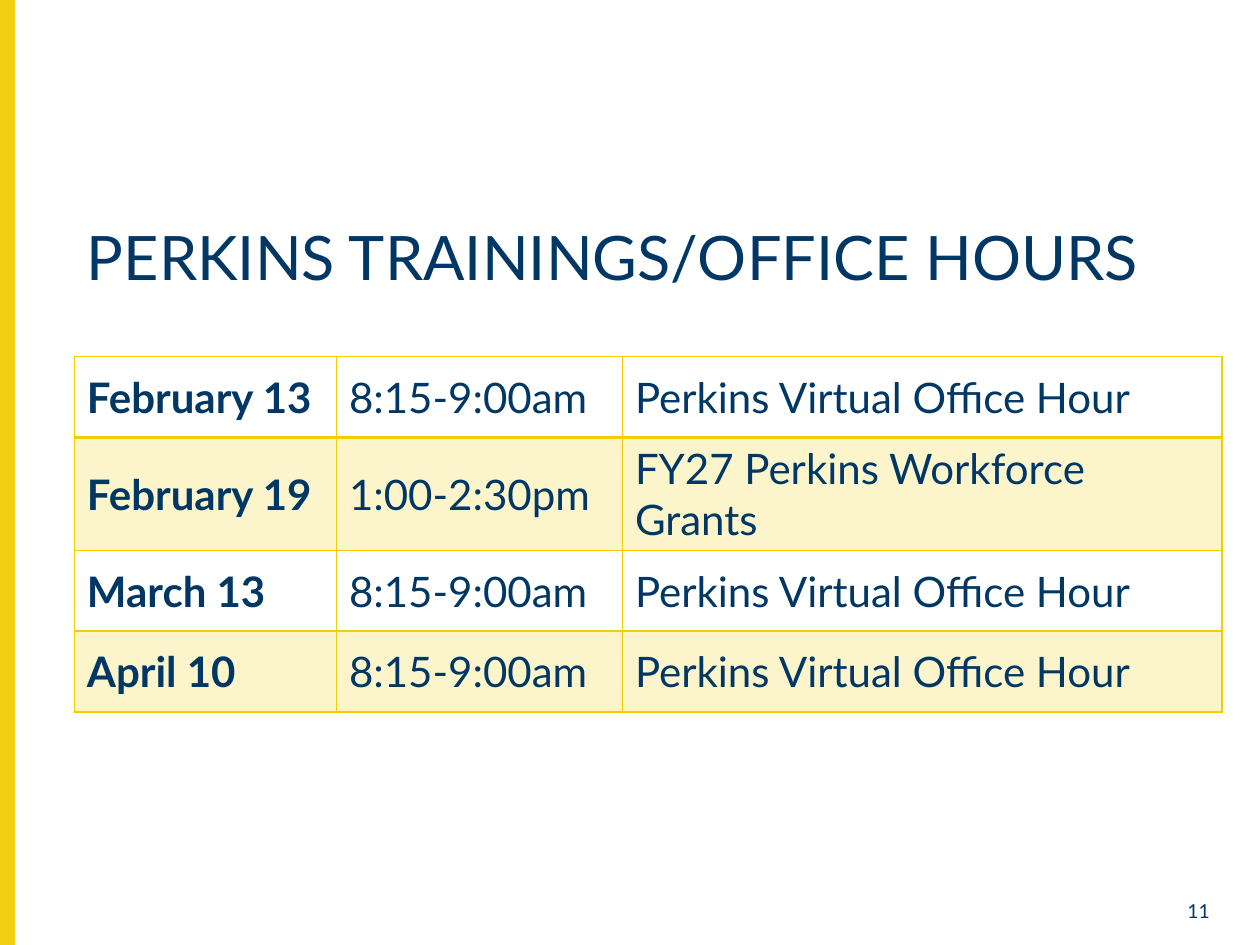
"""Build the Perkins trainings and office hours slide."""
import pptx
import pptx.dml.color
import pptx.enum.shapes
import pptx.enum.text
import pptx.oxml
import pptx.oxml.ns
import pptx.util

Inch, Pt = pptx.util.Inches, pptx.util.Pt
Color = pptx.dml.color.RGBColor.from_string
Anchor = pptx.enum.text.MSO_ANCHOR
Align = pptx.enum.text.PP_ALIGN

TITLE = "PERKINS TRAININGS/OFFICE HOURS"
HOUR = "Perkins Virtual Office Hour"
ROWS = [
    ("February 13", "8:15-9:00am", HOUR),
    ("February 19", "1:00-2:30pm", "FY27 Perkins Workforce Grants"),
    ("March 13", "8:15-9:00am", HOUR),
    ("April 10", "8:15-9:00am", HOUR),
]
PAGE = "11"
THEME = {
    "font": "Lato", "ink": "003764", "bar": "F4CE12", "gold": "F4CD00",
    "tint": 20, "title": 35, "cell": 24, "page": 11,
}
WIDE, HIGH = 10, 7.5
LEFT = 0.59
COLS = (2.08, 2.27, 4.76)
ROW = 0.64


def place(shape, *box):
    for name, size in zip(("left", "top", "width", "height"), box):
        setattr(shape, name, Inch(size))


def write(frame, text, size, bold=False, align=Align.LEFT):
    frame.text = text
    para = frame.paragraphs[0]
    para.alignment = align
    font = para.runs[0].font
    look = {"name": THEME["font"], "size": Pt(size), "bold": bold}
    for name, value in look.items():
        setattr(font, name, value)
    font.color.rgb = Color(THEME["ink"])
    return para


def node(tag, **attrs):
    item = pptx.oxml.parse_xml(f"<a:{tag} {pptx.oxml.ns.nsdecls('a')}/>")
    for name, value in attrs.items():
        item.set(name, str(value))
    return item


def edge(cell, row):
    props = cell._tc.get_or_add_tcPr()
    sides = {"lnL": 1, "lnR": 1, "lnT": 2 if row == 1 else 1,
             "lnB": 2 if row == 0 else 1}
    for spot, (tag, width) in enumerate(sides.items()):
        line, fill = node(tag, w=Pt(width)), node("solidFill")
        fill.append(node("srgbClr", val=THEME["gold"]))
        line.append(fill)
        props.insert(spot, line)


def shade(cell, row):
    if row % 2 == 0:
        cell.fill.background()
        return
    cell.fill.solid()
    cell.fill.fore_color.rgb = Color(THEME["gold"])
    tone = cell._tc.tcPr.find(".//" + pptx.oxml.ns.qn("a:srgbClr"))
    tone.append(node("alpha", val=THEME["tint"] * 1000))


def grid(slide):
    frame = slide.shapes.add_table(
        len(ROWS), len(COLS), Inch(LEFT), Inch(2.83),
        Inch(sum(COLS)), Inch(ROW * len(ROWS)))
    table = frame.table
    for col, width in zip(table.columns, COLS):
        col.width = Inch(width)
    for r, texts in enumerate(ROWS):
        table.rows[r].height = Inch(ROW)
        for c, text in enumerate(texts):
            cell = table.cell(r, c)
            write(cell.text_frame, text, THEME["cell"], c == 0)
            cell.vertical_anchor = Anchor.MIDDLE
            shade(cell, r)
            edge(cell, r)


def main():
    deck = pptx.Presentation()
    deck.slide_width, deck.slide_height = Inch(WIDE), Inch(HIGH)
    slide = deck.slides.add_slide(deck.slide_layouts[5])

    bar = slide.shapes.add_shape(
        pptx.enum.shapes.MSO_SHAPE.RECTANGLE, 0, 0, Inch(0.11), Inch(HIGH))
    bar.shadow.inherit = False
    bar.fill.solid()
    bar.fill.fore_color.rgb = bar.line.color.rgb = Color(THEME["bar"])
    bar.line.width = Pt(1)

    title = slide.shapes.title
    place(title, LEFT, 1.76, 9.12, 0.81)
    title.text_frame.vertical_anchor = Anchor.TOP
    write(title.text_frame, TITLE, THEME["title"]).line_spacing = 0.9

    grid(slide)

    page = slide.shapes.add_textbox(0, 0, 0, 0)
    place(page, 9.19, 7.09, 0.51, 0.26)
    page.text_frame.word_wrap = True
    write(page.text_frame, PAGE, THEME["page"], align=Align.RIGHT)

    deck.save("out.pptx")


if __name__ == "__main__":
    main()
